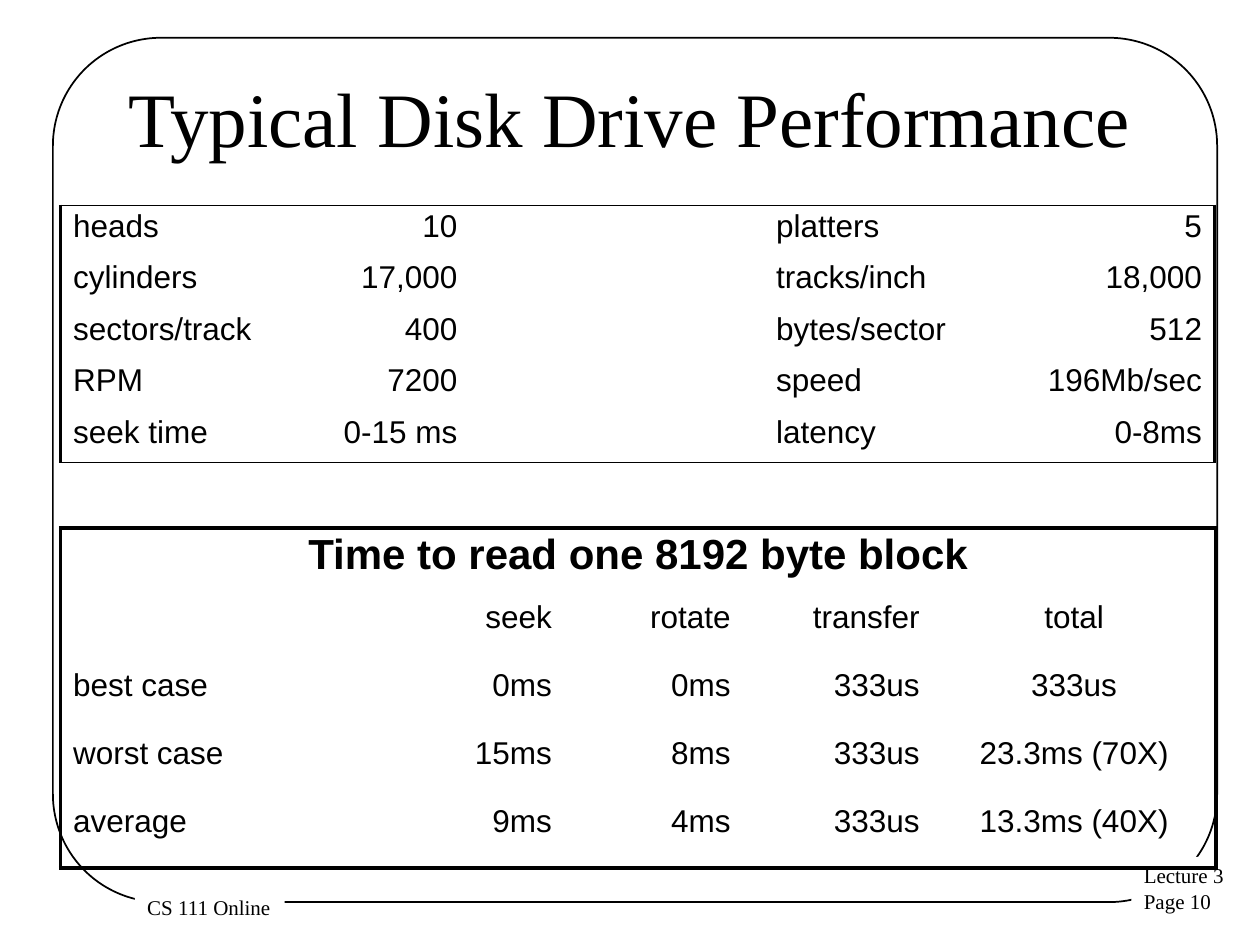
from pptx import Presentation
from pptx.util import Inches, Pt
from pptx.dml.color import RGBColor
from pptx.enum.shapes import MSO_SHAPE as Shape
from pptx.enum.text import MSO_ANCHOR as Anchor, PP_ALIGN as Align
from lxml.etree import SubElement
from pptx.oxml.ns import qn

HUES = {"ink": "000000", "paper": "FFFFFF"}
INK, PAPER = (RGBColor.from_string(HUES[n]) for n in ("ink", "paper"))
ALIGN = {"l": Align.LEFT, "c": Align.CENTER, "r": Align.RIGHT}

deck = Presentation()
deck.slide_width, deck.slide_height = Inches(10), Inches(7.5)
slide = deck.slides.add_slide(deck.slide_layouts[6])


def style(par, face, size, side="l", bold=False):
    par.alignment = ALIGN[side]
    for run in par.runs:
        font = run.font
        font.name, font.size, font.bold = face, Pt(size), bold
        font.color.rgb = INK


def edge(cell, tag, width):
    """Draw one cell border; a width of 0 hides it."""
    line = SubElement(cell._tc.get_or_add_tcPr(), qn("a:" + tag), w=str(Pt(width)))
    if width:
        fill = SubElement(line, qn("a:solidFill"))
        SubElement(fill, qn("a:srgbClr"), val=HUES["ink"])
    else:
        SubElement(line, qn("a:noFill"))


# Frame
frame = slide.shapes.add_shape(
    Shape.ROUNDED_RECTANGLE, Inches(0.42), Inches(0.3), Inches(9.24), Inches(6.86))
frame.adjustments[0] = 0.125
frame.shadow.inherit = False
frame.fill.background()
frame.line.color.rgb = INK
frame.line.width = Pt(1)

# Footer labels and title: text, box, size, side, wrap
labels = [
    ("Lecture 3\nPage 10", (8.98, 6.8, 0.84, 0.51), 12, "l", False),
    ("CS 111 Online", (1.07, 7.05, 1.19, 0.3), 12, "l", False),
    ("Typical Disk Drive Performance", (0.5, 0.3, 9, 1.25), 44, "c", True),
]
for text, spot, size, side, wrap in labels:
    box = slide.shapes.add_textbox(*map(Inches, spot))
    frame = box.text_frame
    frame.word_wrap = wrap
    frame.text = text
    if wrap:
        frame.vertical_anchor = Anchor.MIDDLE
    else:
        box.fill.solid()
        box.fill.fore_color.rgb = PAPER
    for par in frame.paragraphs:
        style(par, "Times New Roman", size, side)

# Tables: top, column widths, row heights, column sides, top/bottom rule, rows
tables = [
    (1.63, [1.79, 1.46, 2.33, 2.03, 1.55], [0.3] + [0.41] * 4, "lrllr", 1, [
        ["heads", "10", "", "platters", "5"],
        ["cylinders", "17,000", "", "tracks/inch", "18,000"],
        ["sectors/track", "400", "", "bytes/sector", "512"],
        ["RPM", "7200", "", "speed", "196Mb/sec"],
        ["seek time", "0-15 ms", "", "latency", "0-8ms"],
    ]),
    (4.19, [2.58, 1.42, 1.42, 1.5, 2.25], [0.54] * 5, "lrrrc", 2.25, [
        ["Time to read one 8192 byte block"],
        ["", "seek", "rotate", "transfer", "total"],
        ["best case", "0ms", "0ms", "333us", "333us"],
        ["worst case", "15ms", "8ms", "333us", "23.3ms (70X)"],
        ["average", "9ms", "4ms", "333us", "13.3ms (40X)"],
    ]),
]
for top, wide, high, sides, rule, rows in tables:
    grid = slide.shapes.add_table(
        len(high), len(wide), Inches(0.48), Inches(top),
        Inches(sum(wide)), Inches(sum(high))).table
    grid.first_row = grid.horz_banding = False
    for col, size in zip(grid.columns, wide):
        col.width = Inches(size)
    for row, size in zip(grid.rows, high):
        row.height = Inches(size)
    last = len(wide) - 1
    for r, row in enumerate(rows):
        head = len(row) == 1
        if head:
            grid.cell(r, 0).merge(grid.cell(r, last))
        for c in range(len(wide)):
            cell = grid.cell(r, c)
            edge(cell, "lnL", 2.25 if c == 0 else 0)
            edge(cell, "lnR", 2.25 if c == last or head else 0)
            edge(cell, "lnT", rule if r == 0 else 0)
            edge(cell, "lnB", rule if r == len(rows) - 1 else 0)
            cell.fill.background()
            if c < len(row):
                cell.text_frame.text = row[c]
            par = cell.text_frame.paragraphs[0]
            par.line_spacing, par.space_after = 0.93, Pt(14.1)
            props = par._p.get_or_add_pPr()
            props.set("marL", str(Inches(0.12)))
            props.set("indent", str(-Inches(0.12)))
            style(par, "Arial", 24 if head else 18, "c" if head else sides[c], head)

deck.save("out.pptx")
